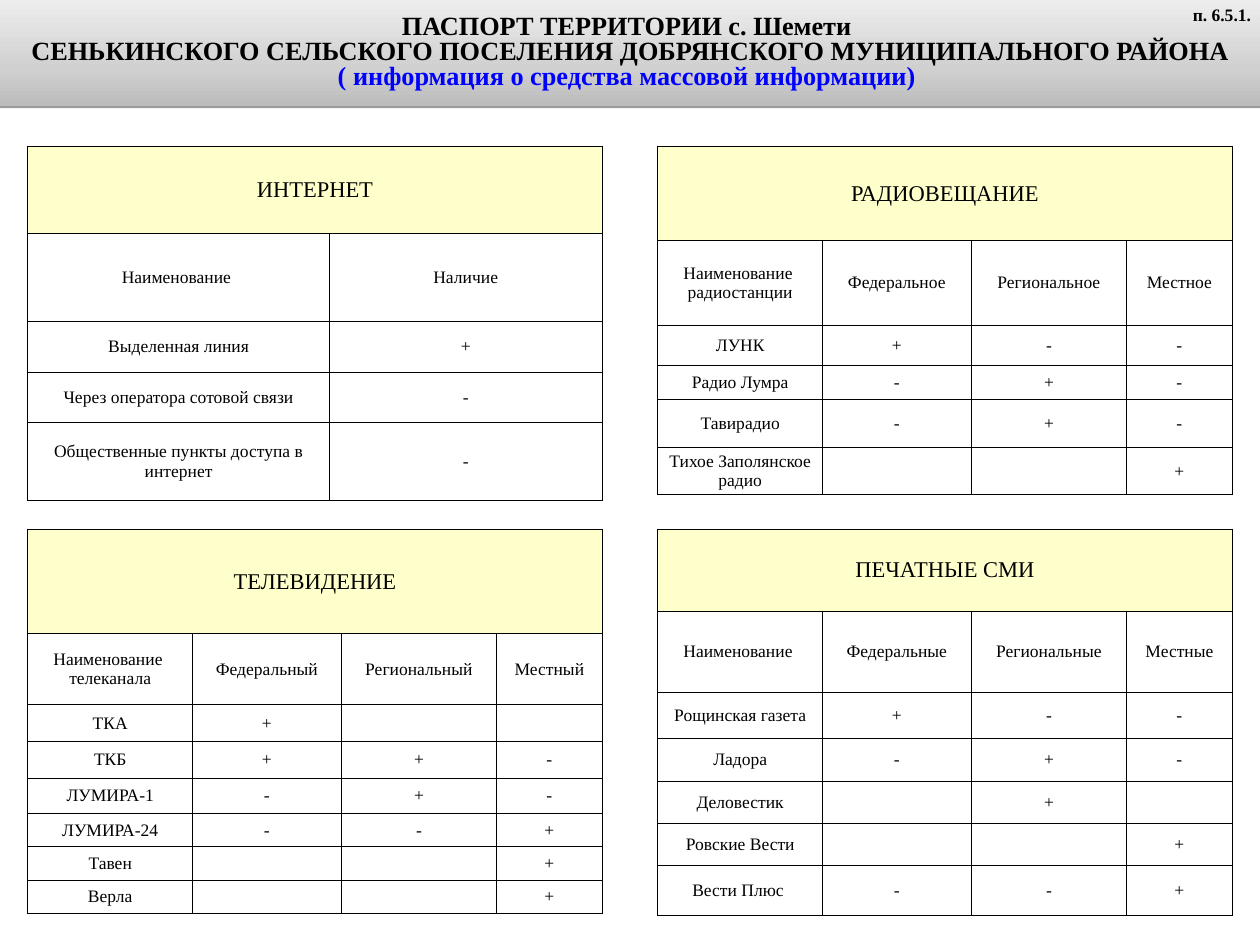
from lxml import etree
from pptx import Presentation
from pptx import util as u
from pptx.dml.color import RGBColor
from pptx.enum import text
from pptx.oxml import parse_xml

THEME = dict(font="Times New Roman", black="000000", blue="0000FF", white="FFFFFF",
             cream="FFFFCC", band=[(0, "BCBCBC"), (35, "D0D0D0"), (100, "EDEDED")],
             title=21, head=18, body=14)
NS = "http://schemas.openxmlformats.org/drawingml/2006/main"
W, H = 14, 10.5
LEFT, TOP = 0.31, 1.63
COL_STEP, ROW_STEP = W / 2, 4.25
TABLE_W = 6.38
FOUR = [1.83, 1.65, 1.73, 1.17]

TABLES = [
    (0, 0, [3.35, 3.03], [0.97, 0.97, 0.57, 0.56, 0.86], "ИНТЕРНЕТ",
     ["Наименование ", "Наличие"],
     [("Выделенная линия", "+"), ("Через оператора сотовой связи", "-"),
      ("Общественные пункты доступа в интернет", "-")]),
    (1, 0, FOUR, [1.04, 0.95, 0.44, 0.38, 0.53, 0.53], "РАДИОВЕЩАНИЕ",
     ["Наименование \nрадиостанции", "Федеральное", "Региональное", "Местное"],
     [("ЛУНК", "+--"), ("Радио Лумра", "-+-"), ("Тавирадио", "-+-"),
      ("Тихое Заполянское радио", "  +")]),
    (0, 1, FOUR, [1.16, 0.79, 0.41, 0.41, 0.39, 0.37, 0.37, 0.37], "ТЕЛЕВИДЕНИЕ",
     ["Наименование \nтелеканала", "Федеральный", "Региональный", "Местный"],
     [("ТКА", "+  "), ("ТКБ", "++-"), ("ЛУМИРА-1", "-+-"), ("ЛУМИРА-24", "--+"),
      ("Тавен", "  +"), ("Верла", "  +")]),
    (1, 1, FOUR, [0.91, 0.91, 0.51, 0.47, 0.47, 0.47, 0.55], "ПЕЧАТНЫЕ СМИ",
     ["Наименование ", "Федеральные", "Региональные", "Местные"],
     [("Рощинская газета", "+--"), ("Ладора", "-+-"), ("Деловестик", " + "),
      ("Ровские Вести", "  +"), ("Вести Плюс ", "--+")]),
]


def write(tf, lines, size, align, bold=False, spacing=None):
    for i, (line, color) in enumerate(lines):
        p = tf.paragraphs[0] if i == 0 else tf.add_paragraph()
        p.alignment = align
        p.space_before = u.Pt(0)
        if spacing:
            p.line_spacing = spacing
        r = p.add_run()
        r.text = line
        r.font.name = THEME["font"]
        r.font.size = u.Pt(size)
        r.font.bold = bold
        r.font.color.rgb = RGBColor.from_string(color)


def style_cell(cell, fill, words, size):
    cell.margin_left = cell.margin_right = cell.margin_top = cell.margin_bottom = u.Inches(0.03)
    cell.vertical_anchor = text.MSO_ANCHOR.MIDDLE
    for side in "LRTB":
        cell._tc.get_or_add_tcPr().append(parse_xml(
            f'<a:ln{side} xmlns:a="{NS}" w="12700"><a:solidFill>'
            f'<a:srgbClr val="{THEME["black"]}"/></a:solidFill></a:ln{side}>'))
    cell.fill.solid()
    cell.fill.fore_color.rgb = RGBColor.from_string(fill)
    if words:
        write(cell.text_frame, [(line, THEME["black"]) for line in words.split("\n")],
              size, text.PP_ALIGN.CENTER)


prs = Presentation()
prs.slide_width, prs.slide_height = u.Inches(W), u.Inches(H)
s = prs.slides.add_slide(prs.slide_layouts[5])
for ph in list(s.placeholders):
    if ph != s.shapes.title:
        ph.element.getparent().remove(ph.element)

sp = s.shapes.title
sp.left, sp.top, sp.width, sp.height = 0, 0, prs.slide_width, u.Inches(1.18)
stops = "".join(f'<a:gs pos="{pos * 1000}"><a:srgbClr val="{color}"/></a:gs>'
                for pos, color in THEME["band"])
spPr = sp.element.spPr
etree.SubElement(spPr, f"{{{NS}}}prstGeom", prst="rect")
spPr.append(parse_xml(f'<a:gradFill xmlns:a="{NS}" rotWithShape="1"><a:gsLst>{stops}</a:gsLst>'
                      '<a:lin ang="16200000" scaled="0"/></a:gradFill>'))
spPr.append(parse_xml(f'<a:effectLst xmlns:a="{NS}"><a:outerShdw blurRad="0" dist="20000" '
                      f'dir="5400000" rotWithShape="0"><a:srgbClr val="{THEME["black"]}">'
                      '<a:alpha val="38000"/></a:srgbClr></a:outerShdw></a:effectLst>'))
tf = sp.text_frame
tf.word_wrap = True
tf.auto_size = text.MSO_AUTO_SIZE.NONE
tf.vertical_anchor = text.MSO_ANCHOR.MIDDLE
write(tf, [("ПАСПОРТ ТЕРРИТОРИИ с. Шемети ", THEME["black"]),
           ("СЕНЬКИНСКОГО СЕЛЬСКОГО ПОСЕЛЕНИЯ ДОБРЯНСКОГО МУНИЦИПАЛЬНОГО РАЙОНА", THEME["black"]),
           ("( информация о средства массовой информации) ", THEME["blue"])],
      THEME["title"], text.PP_ALIGN.CENTER, True, 0.8)

for col, row, widths, heights, heading, columns, entries in TABLES:
    frame = s.shapes.add_table(len(heights), len(widths),
                               u.Inches(LEFT + col * COL_STEP), u.Inches(TOP + row * ROW_STEP),
                               u.Inches(TABLE_W), u.Inches(sum(heights)))
    tbl = frame.table
    tbl.first_row = tbl.horz_banding = False
    for column, width in zip(tbl.columns, widths):
        column.width = u.Inches(width)
    for line, height in zip(tbl.rows, heights):
        line.height = u.Inches(height)
    tbl.cell(0, 0).merge(tbl.cell(0, len(widths) - 1))
    for c in range(len(widths)):
        style_cell(tbl.cell(0, c), THEME["cream"], "" if c else heading, THEME["head"])
    for i, words in enumerate([columns] + [[name, *marks] for name, marks in entries], 1):
        for c, word in enumerate(words):
            style_cell(tbl.cell(i, c), THEME["white"], "" if word == " " else word, THEME["body"])

label_w = 0.94
tf = s.shapes.add_textbox(u.Inches(W - label_w), 0, u.Inches(label_w), u.Inches(0.33)).text_frame
tf.word_wrap = True
tf.auto_size = text.MSO_AUTO_SIZE.SHAPE_TO_FIT_TEXT
write(tf, [("п. 6.5.1.", THEME["black"])], THEME["body"], text.PP_ALIGN.RIGHT, True)

prs.save("out.pptx")
